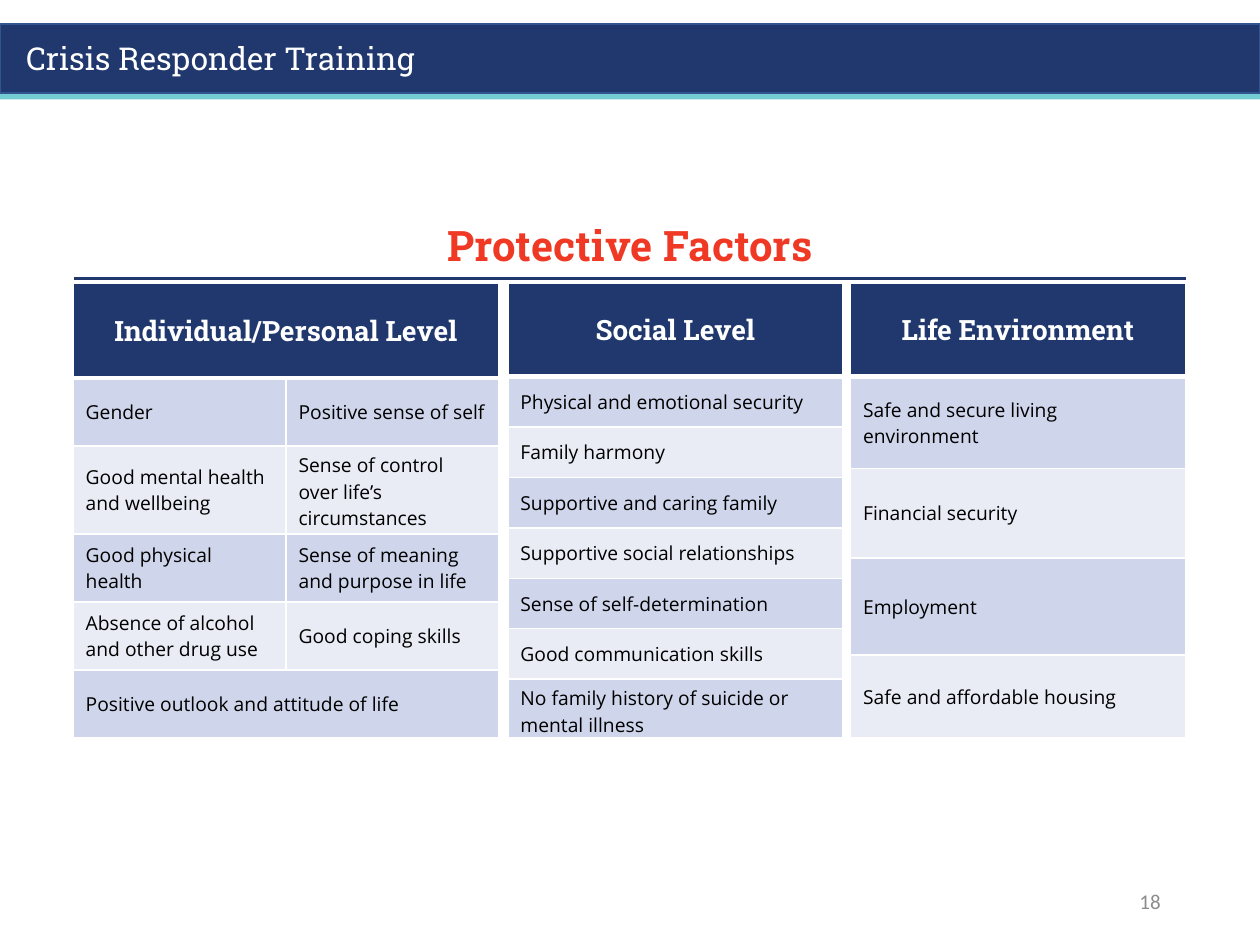
from lxml.etree import SubElement
from pptx import Presentation
from pptx.dml.color import RGBColor
from pptx.enum.shapes import MSO_CONNECTOR, MSO_SHAPE
from pptx.enum.text import MSO_ANCHOR, MSO_AUTO_SIZE, PP_ALIGN
from pptx.oxml import parse_xml
from pptx.oxml.ns import nsdecls, qn
from pptx.util import Inches, Pt

NAVY, TEAL, RED, WHITE = "20386D", "72CCD2", "EF3925", "FFFFFF"
BANDS = "CFD5EA", "E9EBF5"
SLAB = "Roboto Slab"


def paint(fmt, color):
    """Give a fill or a line one solid colour."""
    fill = getattr(fmt, "fill", fmt)
    fill.solid()
    fill.fore_color.rgb = RGBColor.from_string(color)


def write(frame, text, size, face, color, bold=False, align=PP_ALIGN.LEFT):
    frame.text = text
    frame.word_wrap = True
    para = frame.paragraphs[0]
    para.alignment = align
    font = para.font
    font.name, font.size, font.bold = face, Pt(size), bold
    paint(font, color)
    return para


deck = Presentation()
deck.slide_width, deck.slide_height = Inches(10), Inches(7.5)
slide = deck.slides.add_slide(deck.slide_layouts[5])
shapes = slide.shapes

# Banner across the top
for top, height, color in (0.48, 0.31, TEAL), (0.19, 0.55, NAVY):
    band = shapes.add_shape(MSO_SHAPE.RECTANGLE, 0, Inches(top),
                            deck.slide_width, Inches(height))
    band.shadow.inherit = False
    paint(band, color)
    band.line.fill.background()
paint(band.line, "325491")
band.line.width = Pt(1)

course = shapes.add_textbox(Inches(0.11), Inches(0.26), Inches(3.7), Inches(0.4))
write(course.text_frame, "Crisis Responder Training", 18, SLAB, WHITE)

# Title and its rule
title = shapes.title
title.left, title.top = Inches(0.69), Inches(1.78)
title.width, title.height = Inches(8.62), Inches(0.38)
frame = title.text_frame
frame.auto_size = MSO_AUTO_SIZE.NONE
frame.vertical_anchor = MSO_ANCHOR.MIDDLE
para = write(frame, "Protective Factors", 24, SLAB, RED, True, PP_ALIGN.CENTER)
para.line_spacing = 0.9

rule = shapes.add_connector(MSO_CONNECTOR.STRAIGHT, Inches(0.59), Inches(2.21),
                            Inches(9.41), Inches(2.21))
paint(rule.line, NAVY)
rule.line.width = Pt(1.5)
SubElement(rule._element.spPr, qn("a:effectLst"))

# One table per level: left, column width, row heights, rows of text
levels = [
    (0.58, 1.69, [0.75, 0.54, 0.7, 0.54, 0.54, 0.54], [
        ["Individual/Personal Level"],
        ["Gender", "Positive sense of self"],
        ["Good mental health and wellbeing",
         "Sense of control over life’s circumstances"],
        ["Good physical health", "Sense of meaning and purpose in life"],
        ["Absence of alcohol and other drug use", "Good coping skills"],
        ["Positive outlook and attitude of life"]]),
    (4.03, 2.66, [0.74] + [0.4] * 7, [
        ["Social Level"],
        ["Physical and emotional security"],
        ["Family harmony"],
        ["Supportive and caring family"],
        ["Supportive social relationships"],
        ["Sense of self-determination"],
        ["Good communication skills"],
        ["No family history of suicide or mental illness"]]),
    (6.75, 2.66, [0.74, 0.73, 0.71, 0.77, 0.66], [
        ["Life Environment"],
        ["Safe and secure living environment"],
        ["Financial security"],
        ["Employment"],
        ["Safe and affordable housing"]]),
]

for left, width, heights, rows in levels:
    count = max(map(len, rows))
    table = shapes.add_table(len(rows), count, Inches(left), Inches(2.25),
                             Inches(width * count), Inches(sum(heights))).table
    table.first_row = table.horz_banding = False
    for col in table.columns:
        col.width = Inches(width)
    for y, texts in enumerate(rows):
        table.rows[y].height = Inches(heights[y])
        for x in range(count):
            cell = table.cell(y, x)
            for side in "LRTB":
                thick = 3 if (y, side) in ((0, "B"), (1, "T")) else 1
                cell._tc.get_or_add_tcPr().append(parse_xml(
                    f'<a:ln{side} {nsdecls("a")} w="{Pt(thick)}"><a:solidFill>'
                    f'<a:srgbClr val="{WHITE}"/></a:solidFill></a:ln{side}>'))
            paint(cell, BANDS[(y - 1) % 2] if y else NAVY)
            cell.vertical_anchor = MSO_ANCHOR.MIDDLE
        if len(texts) < count:
            table.cell(y, 0).merge(table.cell(y, count - 1))
        for x, text in enumerate(texts):
            frame = table.cell(y, x).text_frame
            if y:
                write(frame, text, 11, "Open Sans", "000000")
            else:
                write(frame, text, 16, SLAB, WHITE, True, PP_ALIGN.CENTER)

# Page number
page = shapes.add_textbox(Inches(7.06), Inches(6.95), Inches(2.25), Inches(0.4))
page.text_frame.vertical_anchor = MSO_ANCHOR.MIDDLE
write(page.text_frame, "18", 12, "Calibri", "8C8C8C", align=PP_ALIGN.RIGHT)

deck.save("out.pptx")
